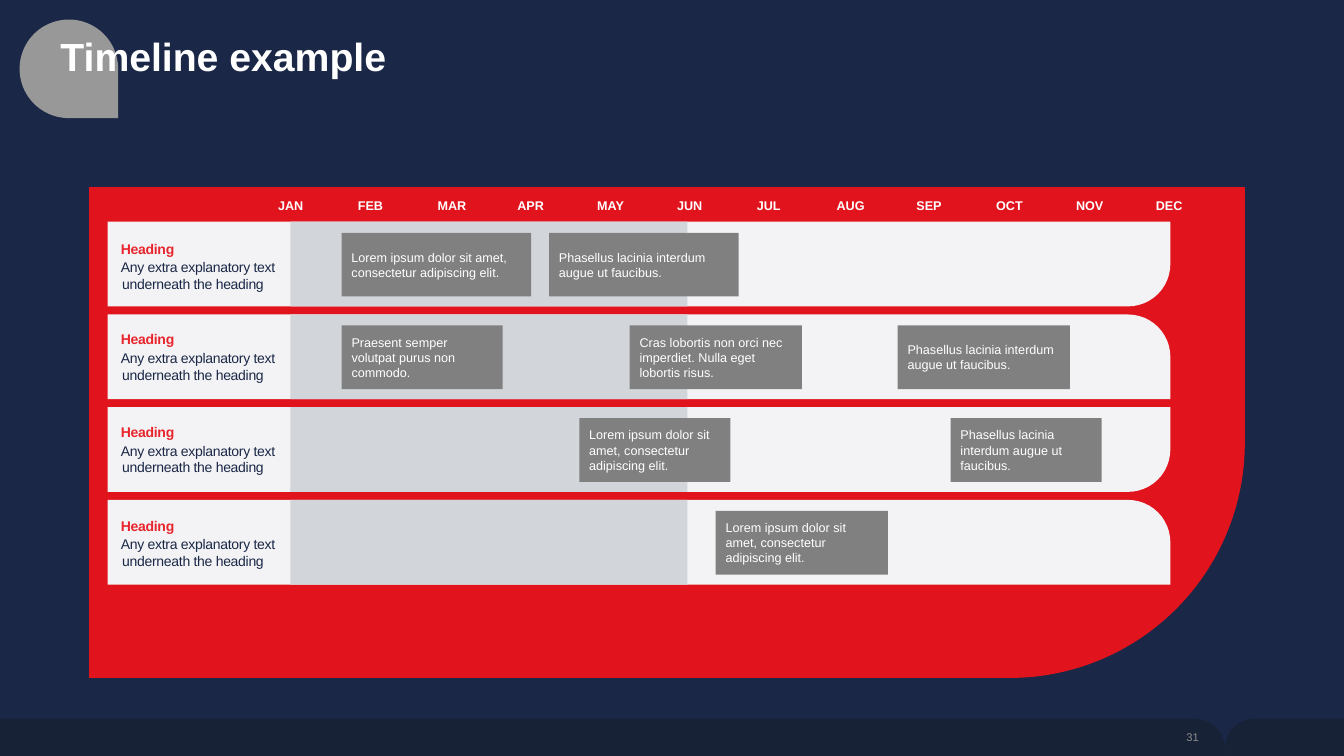
from math import cos, radians, sin

from pptx import Presentation
from pptx.dml.color import RGBColor
from pptx.enum.shapes import MSO_SHAPE
from pptx.enum.text import MSO_ANCHOR, PP_ALIGN
from pptx.util import Pt

RECT = MSO_SHAPE.RECTANGLE
ROUND_ONE = MSO_SHAPE.ROUND_1_RECTANGLE
TEAR = MSO_SHAPE.TEAR
TOP, MIDDLE = MSO_ANCHOR.TOP, MSO_ANCHOR.MIDDLE
LEFT, RIGHT = PP_ALIGN.LEFT, PP_ALIGN.RIGHT

NAVY, DARK_NAVY, RED, HEADING_RED = "1A2746", "182237", "E1141E", "E8252D"
PALE, PERIOD_GREY, TASK_GREY = "F3F3F5", "D2D5DA", "808080"
TEAR_GREY, NUMBER_GREY, WHITE = "989898", "8C8C8C", "FFFFFF"

SLIDE_WIDTH, SLIDE_HEIGHT = 960, 540
FOOTER_TOP, FOOTER_SPLIT, FOOTER_RADIUS = 513.4, 874.8, 21.6
ROW_TOP, ROW_STEP, ROW_HEIGHT = 158.4, 66.24, 60.5
MONTH_LEFT, MONTH_STEP = 191.5, 57

MONTH_WIDTHS = {
    "JAN": 32.4, "FEB": 32.4, "MAR": 35.3, "APR": 33.8, "MAY": 34.6, "JUN": 32.4,
    "JUL": 31.7, "AUG": 34.6, "SEP": 32.4, "OCT": 33.8, "NOV": 34.6, "DEC": 33.8,
}
LOREM = "Lorem ipsum dolor sit amet, consectetur adipiscing elit."
PHASELLUS = "Phasellus lacinia interdum augue ut faucibus."
ROWS = [
    (170.6, [(244, 135.5, LOREM), (392.2, 135.5, PHASELLUS)]),
    (235.4, [
        (244, 115, "Praesent semper volutpat purus non commodo."),
        (449.8, 123, "Cras lobortis non orci nec imperdiet. Nulla eget lobortis risus."),
        (641.2, 123, PHASELLUS),
    ]),
    (301.7, [(413.8, 108, LOREM), (679, 108, PHASELLUS)]),
    (368.6, [(511.2, 123, LOREM)]),
]


def paint(target, color):
    target.fill.solid()
    target.fill.fore_color.rgb = RGBColor.from_string(color)


def finish(shape, color):
    paint(shape, color)
    shape.line.fill.background()
    shape.shadow.inherit = False


def add_block(slide, kind, box, color, corner=None, flipped=False):
    block = slide.shapes.add_shape(kind, *map(Pt, box))
    finish(block, color)
    if corner is not None:
        block.adjustments[0] = corner
    if flipped:
        block._element.spPr.xfrm.set("flipV", "1")
    return block


def write(paragraph, text, size, color, bold=False, align=LEFT):
    run = paragraph.add_run()
    run.text = text
    paragraph.alignment = align
    font = paragraph.font
    font.name, font.size, font.bold = "Arial", Pt(size), bold
    font.color.rgb = RGBColor.from_string(color)
    return run


def add_text(slide, box, text, size, color, bold=False, align=LEFT, wrap=True, anchor=TOP):
    frame = slide.shapes.add_textbox(*map(Pt, box)).text_frame
    frame.word_wrap = wrap
    frame.vertical_anchor = anchor
    write(frame.paragraphs[0], text, size, color, bold, align)


def add_footer_part(slide, outer_edge, direction):
    center = FOOTER_SPLIT - direction * FOOTER_RADIUS
    arc = [
        (center + direction * FOOTER_RADIUS * sin(radians(angle)),
         FOOTER_TOP + FOOTER_RADIUS * (1 - cos(radians(angle))))
        for angle in range(0, 91, 5)
    ]
    outline = slide.shapes.build_freeform(Pt(outer_edge), Pt(FOOTER_TOP))
    corners = arc + [(FOOTER_SPLIT, SLIDE_HEIGHT), (outer_edge, SLIDE_HEIGHT)]
    outline.add_line_segments([(Pt(x), Pt(y)) for x, y in corners])
    finish(outline.convert_to_shape(), DARK_NAVY)


def format_title(slide):
    title = slide.shapes.title
    title.left, title.top, title.width, title.height = map(Pt, (36, 23, 838.8, 43.2))
    title.text_frame.vertical_anchor = TOP
    paragraph = title.text_frame.paragraphs[0]
    paragraph.line_spacing = 0.9
    write(paragraph, "Timeline example", 28, WHITE, True)
    slide.shapes._spTree.append(title._element)


def add_row_label(slide, top):
    frame = slide.shapes.add_textbox(Pt(86.4), Pt(top), Pt(110.9), Pt(38.2)).text_frame
    frame.word_wrap = True
    frame.vertical_anchor = MIDDLE
    frame.margin_left = frame.margin_right = frame.margin_bottom = 0
    frame.margin_top = Pt(0.9)
    heading, detail = frame.paragraphs[0], frame.add_paragraph()
    detail.space_before = Pt(1)
    for paragraph, text, color, bold in (
        (heading, "Heading", HEADING_RED, True),
        (detail, "Any extra explanatory text underneath the heading", NAVY, False),
    ):
        properties = paragraph._p.get_or_add_pPr()
        properties.set("marL", str(Pt(0.9)))
        properties.set("indent", str(-Pt(0.9)))
        run = write(paragraph, text, 10, color, bold)
        run._r.get_or_add_rPr().set("spc", "-20")


def add_task(slide, left, top, width, text):
    task = add_block(slide, RECT, (left, top, width, 45.4), TASK_GREY)
    frame = task.text_frame
    frame.word_wrap = True
    frame.vertical_anchor = MIDDLE
    write(frame.paragraphs[0], text, 9, WHITE)


def add_row(slide, index, label_top, tasks):
    top = ROW_TOP + index * ROW_STEP
    add_block(slide, ROUND_ONE, (77, top, 759, ROW_HEIGHT), PALE, 0.5, index % 2 == 0)
    add_block(slide, RECT, (207.4, top, 283.7, ROW_HEIGHT), PERIOD_GREY)
    add_row_label(slide, label_top)
    for left, width, text in tasks:
        add_task(slide, left, top + 7.9, width, text)


def main():
    deck = Presentation()
    deck.slide_width, deck.slide_height = Pt(SLIDE_WIDTH), Pt(SLIDE_HEIGHT)
    slide = deck.slides.add_slide(deck.slide_layouts[5])
    paint(slide.background, NAVY)

    add_footer_part(slide, 0, 1)
    add_footer_part(slide, SLIDE_WIDTH, -1)
    add_block(slide, TEAR, (14, 14, 70.4, 70.4), TEAR_GREY, flipped=True)
    format_title(slide)

    add_block(slide, ROUND_ONE, (63.6, 133.7, 825.6, 350.6), RED, 0.479, True)
    for index, (month, width) in enumerate(MONTH_WIDTHS.items()):
        box = (MONTH_LEFT + index * MONTH_STEP, 137.5, width, 18)
        add_text(slide, box, month, 9, WHITE, bold=True, wrap=False)
    for index, (label_top, tasks) in enumerate(ROWS):
        add_row(slide, index, label_top, tasks)

    add_text(slide, (783.4, 517, 80, 19.4), "31", 8, NUMBER_GREY, align=RIGHT, anchor=MIDDLE)
    deck.save("out.pptx")


if __name__ == "__main__":
    main()
